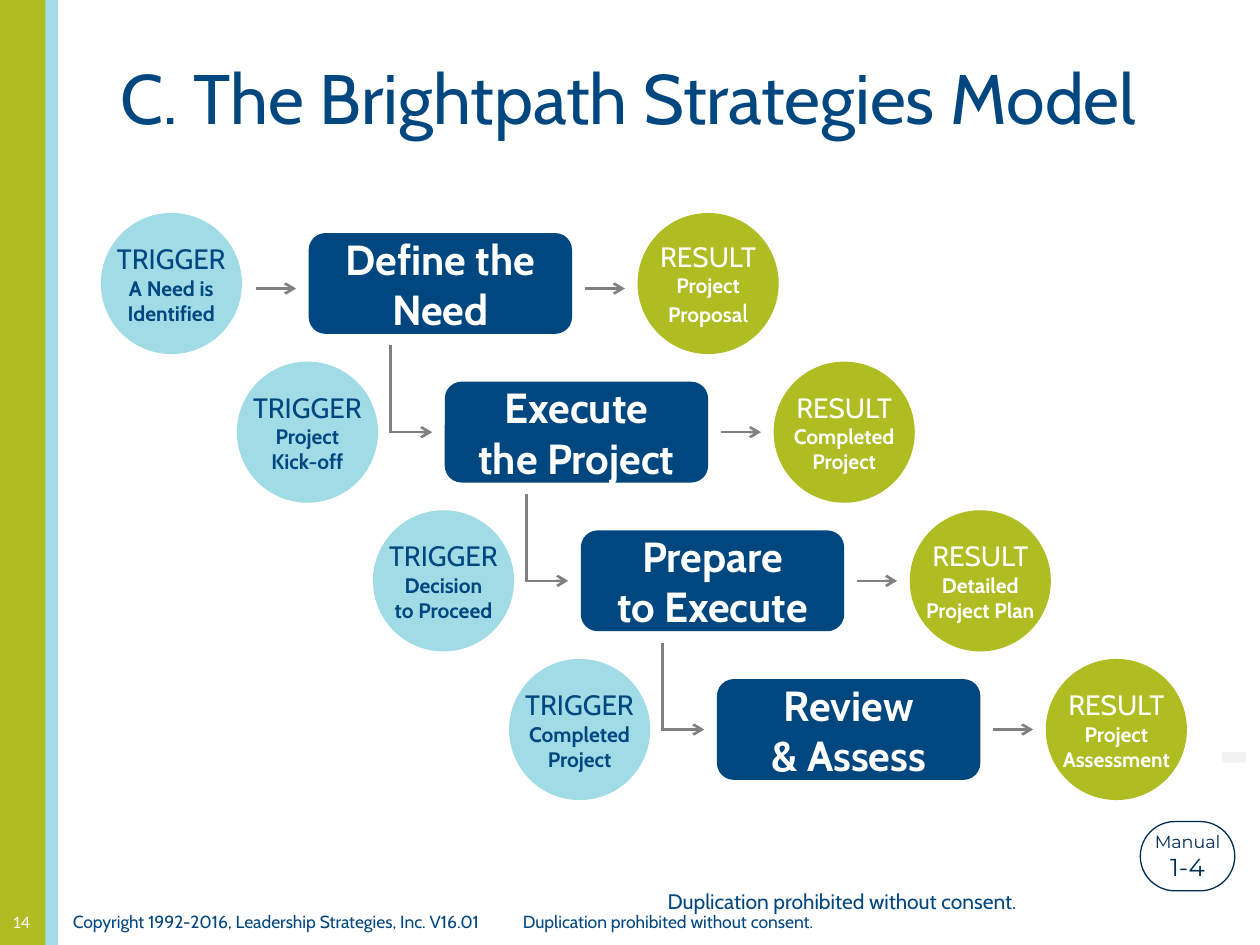
from dataclasses import dataclass

from lxml import etree
from pptx import Presentation
from pptx.dml.color import RGBColor
from pptx.enum import shapes, text
from pptx.oxml import ns
from pptx.util import Inches, Pt


@dataclass(frozen=True)
class Theme:
    navy: str = "00467F"
    ink: str = "002C54"
    green: str = "AFBD22"
    aqua: str = "A0DBE6"
    gray: str = "808080"
    pale: str = "F2F2F2"
    white: str = "FFFFFF"
    font: str = "Cabin"
    badge_font: str = "Montserrat"
    number_font: str = "Calibri"
    title: int = 40
    dash: int = 48
    step: int = 24
    heading: int = 16
    detail_end: int = 14
    detail: int = 12
    small: int = 10


THEME = Theme()
STEP_X, STEP_Y = 1.08, 1.18
CIRCLE = 1.12
ARROW = 0.32

LEFT, CENTER = text.PP_ALIGN.LEFT, text.PP_ALIGN.CENTER
TOP, MIDDLE, BOTTOM = (text.MSO_ANCHOR.TOP, text.MSO_ANCHOR.MIDDLE,
                       text.MSO_ANCHOR.BOTTOM)
RECT, ROUNDED, OVAL = (shapes.MSO_SHAPE.RECTANGLE,
                       shapes.MSO_SHAPE.ROUNDED_RECTANGLE,
                       shapes.MSO_SHAPE.OVAL)

# step lines, trigger lines, result lines
STAGES = [
    (["Define the Need"], ["A Need is", "Identified"], ["Project", "Proposal"]),
    (["Execute", "the Project"], ["Project", "Kick-off"],
     ["Completed", "Project"]),
    (["Prepare", "to Execute"], ["Decision", "to Proceed"],
     ["Detailed", "Project Plan"]),
    (["Review", "& Assess"], ["Completed", "Project"],
     ["Project", "Assessment"]),
]


def style(span, size, color, bold=False, font=THEME.font):
    span.font.size = Pt(size)
    span.font.bold = bold
    span.font.name = font
    span.font.color.rgb = RGBColor.from_string(color)


def write(shape, lines, color, font=THEME.font, align=CENTER, anchor=MIDDLE,
          wrap=False):
    """Fill a shape with one paragraph per (wording, size, bold) line."""
    frame = shape.text_frame
    frame.word_wrap = wrap
    frame.vertical_anchor = anchor
    frame.text = "\n".join(wording for wording, _, _ in lines)
    for para, (_, size, bold) in zip(frame.paragraphs, lines):
        para.alignment = align
        style(para.runs[0], size, color, bold, font)


def add_text(page, area, wording, size, color=THEME.navy, bold=False, **layout):
    box = page.shapes.add_textbox(*map(Inches, area))
    write(box, [(wording, size, bold)], color, **layout)


def add_shape(page, kind, area, fill, line=None):
    shape = page.shapes.add_shape(kind, *map(Inches, area))
    shape.shadow.inherit = False
    shape.fill.solid()
    shape.fill.fore_color.rgb = RGBColor.from_string(fill)
    if line:
        shape.line.color.rgb = RGBColor.from_string(line)
        shape.line.width = Pt(0.75)
    else:
        shape.line.fill.background()
    return shape


def add_line(page, start, end, arrow=False):
    line = page.shapes.add_connector(shapes.MSO_CONNECTOR.STRAIGHT,
                                     *map(Inches, (*start, *end)))
    line.line.color.rgb = RGBColor.from_string(THEME.gray)
    line.line.width = Pt(1.5)
    if arrow:
        etree.SubElement(line.line._get_or_add_ln(), ns.qn("a:tailEnd"),
                         type="arrow")
    etree.SubElement(line._element.spPr, ns.qn("a:effectLst"))


def add_circle(page, left, top, heading, details, fill, color):
    circle = add_shape(page, OVAL, (left, top, CIRCLE, CIRCLE), fill)
    lines = [(heading, THEME.heading, False)]
    lines += [(detail, THEME.detail, True) for detail in details]
    write(circle, lines, color)
    return circle


def lighten_last_letter(shape):
    """Set the last letter of a shape's text larger and not bold."""
    para = shape.text_frame.paragraphs[-1]
    span = para.runs[0]
    letter = para.add_run()
    span.text, letter.text = span.text[:-1], span.text[-1]
    style(letter, THEME.detail_end, THEME.white)


def add_stage(page, row, step, trigger, result):
    left, top = 0.8 + row * STEP_X, 1.69 + row * STEP_Y
    box = add_shape(page, ROUNDED, (left + 1.65, top + 0.16, 2.09, 0.8),
                    THEME.navy)
    write(box, [(line, THEME.step, True) for line in step], THEME.white,
          wrap=True)
    add_circle(page, left, top, "TRIGGER", trigger, THEME.aqua, THEME.navy)
    outcome = add_circle(page, left + 4.26, top, "RESULT", result, THEME.green,
                         THEME.white)
    if row == 0:
        lighten_last_letter(outcome)

    arrow_y = top + (0.6 if row == 0 else 0.56)
    for arrow_x in (left + 1.23, left + 3.84):
        add_line(page, (arrow_x, arrow_y), (arrow_x + ARROW, arrow_y), True)
    if row > 0:
        add_line(page, (left + 1.22, top - 0.13), (left + 1.22, arrow_y + 0.01))


def add_frame(page):
    """Side bands, footer lines and page number."""
    add_shape(page, RECT, (0, 0, 0.38, 7.5), THEME.green)
    add_shape(page, RECT, (0.36, 0, 0.1, 7.5), THEME.aqua)
    consent = "Duplication prohibited without consent."
    add_text(page, (4.57, 6.95, 4.23, 0.4), consent, THEME.detail, wrap=True)
    add_text(page, (4.04, 7.18, 2.52, 0.27), consent, THEME.small, anchor=TOP)
    add_text(page, (0.48, 7.18, 3.6, 0.27),
             "Copyright 1992-2016, Leadership Strategies, Inc. V16.01",
             THEME.small, align=LEFT, anchor=TOP)
    add_text(page, (0, 7.05, 0.5, 0.4), "14", THEME.small, THEME.white,
             font=THEME.number_font, align=LEFT, anchor=BOTTOM, wrap=True)


def add_manual_badge(page):
    badge = add_shape(page, ROUNDED, (9.05, 6.52, 0.75, 0.55), THEME.white,
                      THEME.ink)
    badge.adjustments[0] = 0.5
    write(badge, [("Manual", THEME.small, False),
                  ("1-4", THEME.detail_end, False)],
          THEME.ink, THEME.badge_font)


def main():
    deck = Presentation()
    deck.slide_width, deck.slide_height = Inches(10), Inches(7.5)
    page = deck.slides.add_slide(deck.slide_layouts[6])
    add_frame(page)
    add_text(page, (0.86, 0.14, 8.83, 1.25),
             "C. The Brightpath Strategies Model", THEME.title, align=LEFT,
             wrap=True)
    add_text(page, (9.57, 5.49, 0.43, 0.91), "-", THEME.dash, THEME.pale, True,
             font=THEME.badge_font, align=LEFT, anchor=TOP)
    add_manual_badge(page)
    for row, stage in enumerate(STAGES):
        add_stage(page, row, *stage)
    deck.save("out.pptx")


if __name__ == "__main__":
    main()
